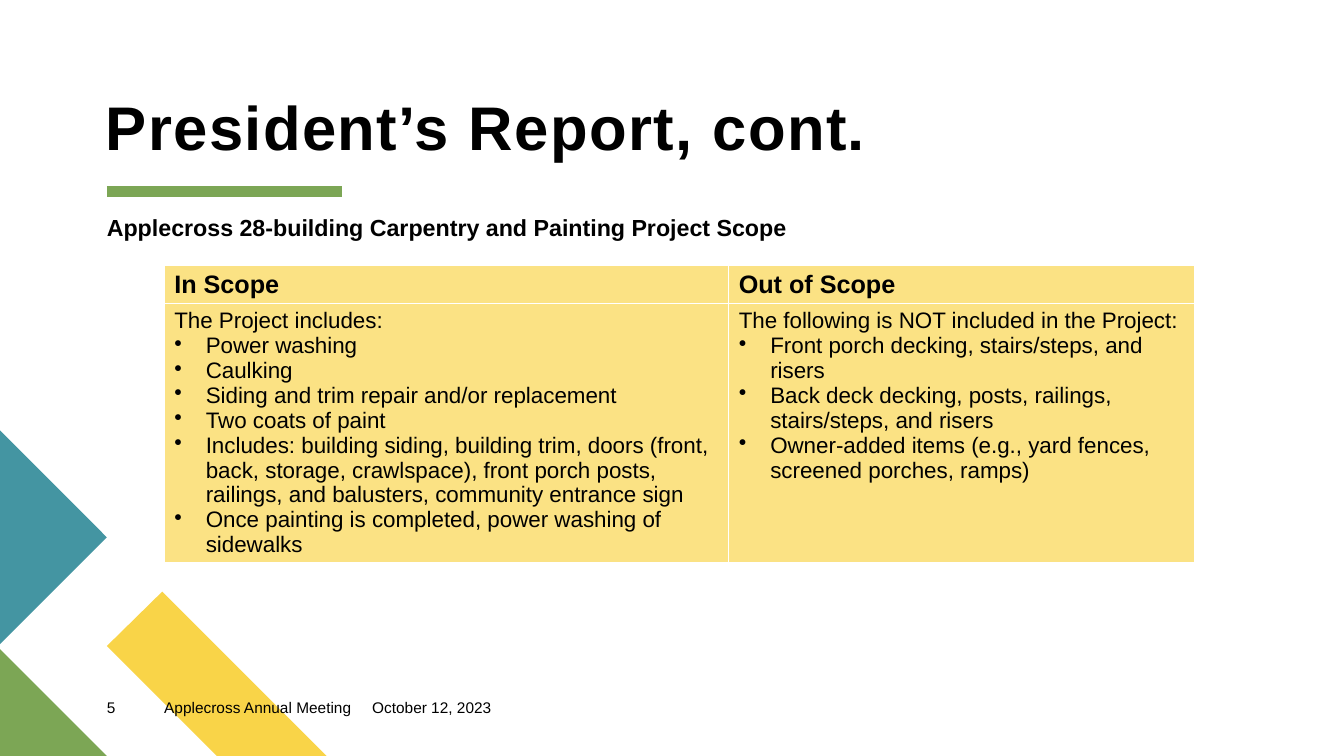
import pptx
import pptx.util
import pptx.dml.color
import pptx.enum.shapes
import pptx.enum.text
import lxml.etree
from dataclasses import dataclass

Pt = pptx.util.Pt
MSO_ANCHOR = pptx.enum.text.MSO_ANCHOR
MSO_AUTO_SIZE = pptx.enum.text.MSO_AUTO_SIZE

TITLE = "President’s Report, cont."
SUBTITLE = "Applecross 28-building Carpentry and Painting Project Scope"
FOOTER = [
    ("5", 76.3, 41),
    ("Applecross Annual Meeting", 117.3, 148.5),
    ("October 12, 2023", 265.8, 103.5),
]
SCOPE = [
    ("In Scope", 403.2, "The Project includes:", [
        "Power washing",
        "Caulking",
        "Siding and trim repair and/or replacement",
        "Two coats of paint",
        "Includes: building siding, building trim, doors (front, back, storage, crawlspace), "
        "front porch posts, railings, and balusters, community entrance sign",
        "Once painting is completed, power washing of sidewalks",
    ]),
    ("Out of Scope", 332.6, "The following is NOT included in the Project:", [
        "Front porch decking, stairs/steps, and risers",
        "Back deck decking, posts, railings, stairs/steps, and risers",
        "Owner-added items (e.g., yard fences, screened porches, ramps)",
    ]),
]
ROW_HEIGHTS = [27.3, 184]


@dataclass
class Theme:
    font: str = "Arial"
    text: str = "000000"
    yellow: str = "F9D448"
    green: str = "7CA655"
    teal: str = "4495A2"
    cell: str = "FBE284"
    title: float = 44
    subtitle: float = 16.6
    header: float = 18
    body: float = 16
    footer: float = 11


theme = Theme()
DECOR = [
    (theme.yellow, [(233.3, 540), (154.8, 540), (76.3, 461.5), (115.9, 422.6)]),
    (theme.green, [(76.3, 540), (0, 540), (0, 463.7)]),
    (theme.teal, [(0, 307.4), (76.3, 383.8), (0, 460.1)]),
]


def rgb(code):
    return pptx.dml.color.RGBColor.from_string(code)


def write(p, text, size, bold=False):
    p.text = text
    p.font.name = theme.font
    p.font.size = Pt(size)
    p.font.bold = bold
    p.font.color.rgb = rgb(theme.text)


def place(sp, left, top, width, height):
    sp.left, sp.top, sp.width, sp.height = map(Pt, (left, top, width, height))
    tf = sp.text_frame
    tf.margin_left = tf.margin_right = tf.margin_top = tf.margin_bottom = 0
    tf.word_wrap = True
    tf.auto_size = MSO_AUTO_SIZE.NONE
    return tf


def set_bullet(p, char=None, indent=0):
    pPr = p._p.get_or_add_pPr()
    pPr.set("marL", str(Pt(indent)))
    pPr.set("indent", str(-Pt(indent)))
    tag = pptx.oxml.ns.qn("a:buChar" if char else "a:buNone")
    bullet = lxml.etree.Element(tag)
    if char:
        bullet.set("char", char)
    pPr.insert_element_before(bullet, "a:tabLst", "a:defRPr", "a:extLst")


def add_decor(s):
    for color, points in DECOR:
        builder = s.shapes.build_freeform(Pt(points[0][0]), Pt(points[0][1]), scale=1.0)
        builder.add_line_segments([(Pt(x), Pt(y)) for x, y in points[1:]], close=True)
        sp = builder.convert_to_shape()
        sp.shadow.inherit = False
        sp.fill.solid()
        sp.fill.fore_color.rgb = rgb(color)
        sp.line.fill.background()
    rule = s.shapes.add_connector(
        pptx.enum.shapes.MSO_CONNECTOR.STRAIGHT, Pt(76.3), Pt(136.7), Pt(244.6), Pt(136.7))
    rule.line.color.rgb = rgb(theme.green)
    rule.line.width = Pt(8)
    lxml.etree.SubElement(rule._element.spPr, pptx.oxml.ns.qn("a:effectLst"))


def add_headings(s):
    tf = place(s.shapes.title, 75.6, 69.1, 577.4, 48.2)
    tf.vertical_anchor = MSO_ANCHOR.BOTTOM
    p = tf.paragraphs[0]
    write(p, TITLE, theme.title, True)
    p.alignment = pptx.enum.text.PP_ALIGN.LEFT
    p.line_spacing = 0.9
    p.runs[0]._r.get_or_add_rPr().set("spc", "100")

    tf = place(s.placeholders[1], 76.3, 154.8, 506.2, 31.7)
    tf.vertical_anchor = MSO_ANCHOR.TOP
    p = tf.paragraphs[0]
    write(p, SUBTITLE, theme.subtitle, True)
    p.line_spacing = 0.9
    p.space_before = Pt(10)
    set_bullet(p)


def add_footer(s):
    for text, left, width in FOOTER:
        tf = place(s.shapes.add_textbox(0, 0, 0, 0), left, 498.5, width, 19.4)
        write(tf.paragraphs[0], text, theme.footer)


def add_scope_table(s):
    width = sum(column[1] for column in SCOPE)
    table = s.shapes.add_table(
        2, len(SCOPE), Pt(117.3), Pt(189.4), Pt(width), Pt(sum(ROW_HEIGHTS))).table
    table.horz_banding = False
    for row, height in zip(table.rows, ROW_HEIGHTS):
        row.height = Pt(height)
    for i, (heading, col_width, intro, items) in enumerate(SCOPE):
        table.columns[i].width = Pt(col_width)
        head, body = table.cell(0, i), table.cell(1, i)
        for cell in (head, body):
            cell.fill.solid()
            cell.fill.fore_color.rgb = rgb(theme.cell)
        write(head.text_frame.paragraphs[0], heading, theme.header, True)
        write(body.text_frame.paragraphs[0], intro, theme.body)
        for item in items:
            p = body.text_frame.add_paragraph()
            write(p, item, theme.body)
            set_bullet(p, "•", 22.5)


def main():
    prs = pptx.Presentation()
    prs.slide_width, prs.slide_height = Pt(960), Pt(540)
    s = prs.slides.add_slide(prs.slide_layouts[1])
    add_decor(s)
    add_headings(s)
    add_footer(s)
    add_scope_table(s)
    prs.save("out.pptx")


if __name__ == "__main__":
    main()
